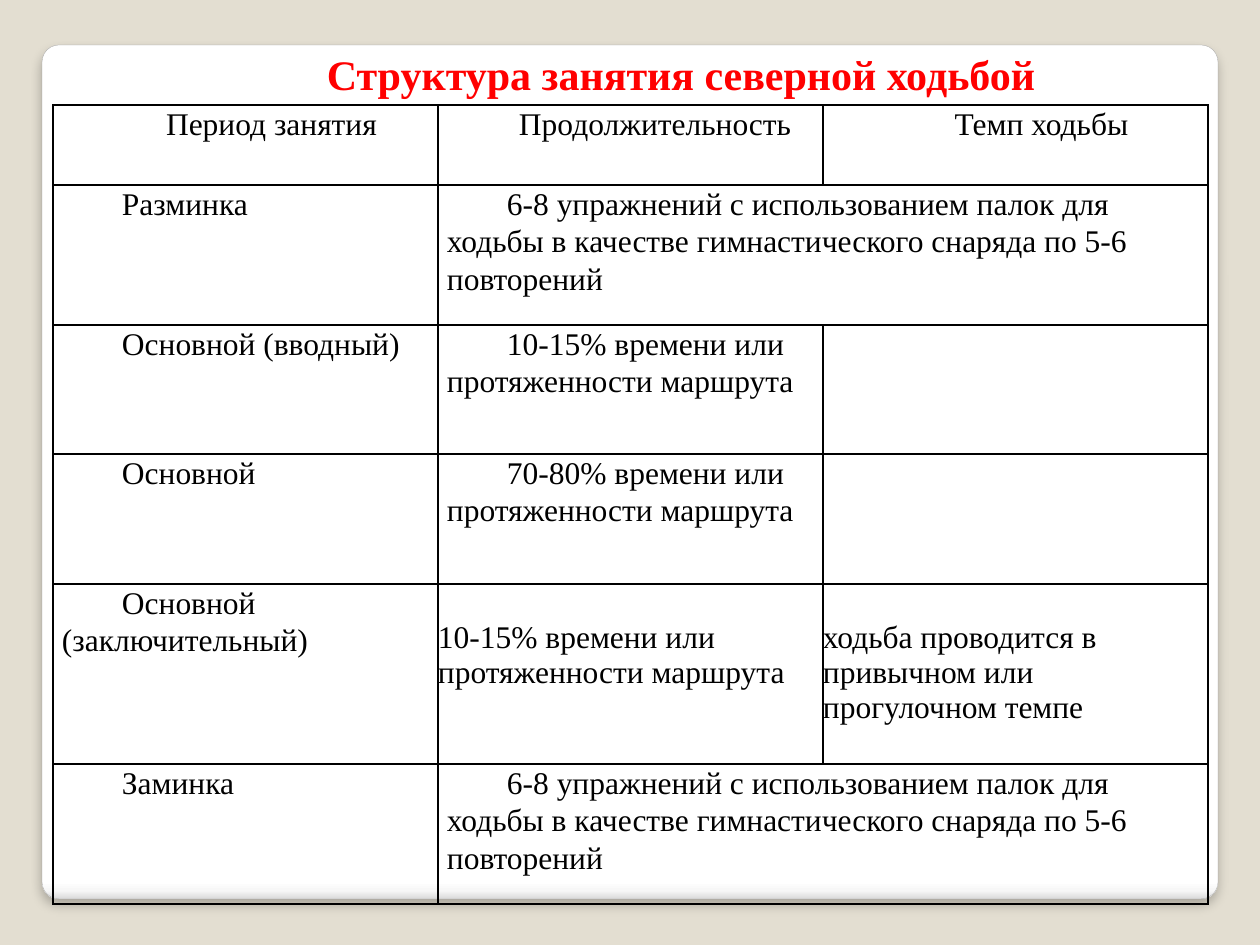
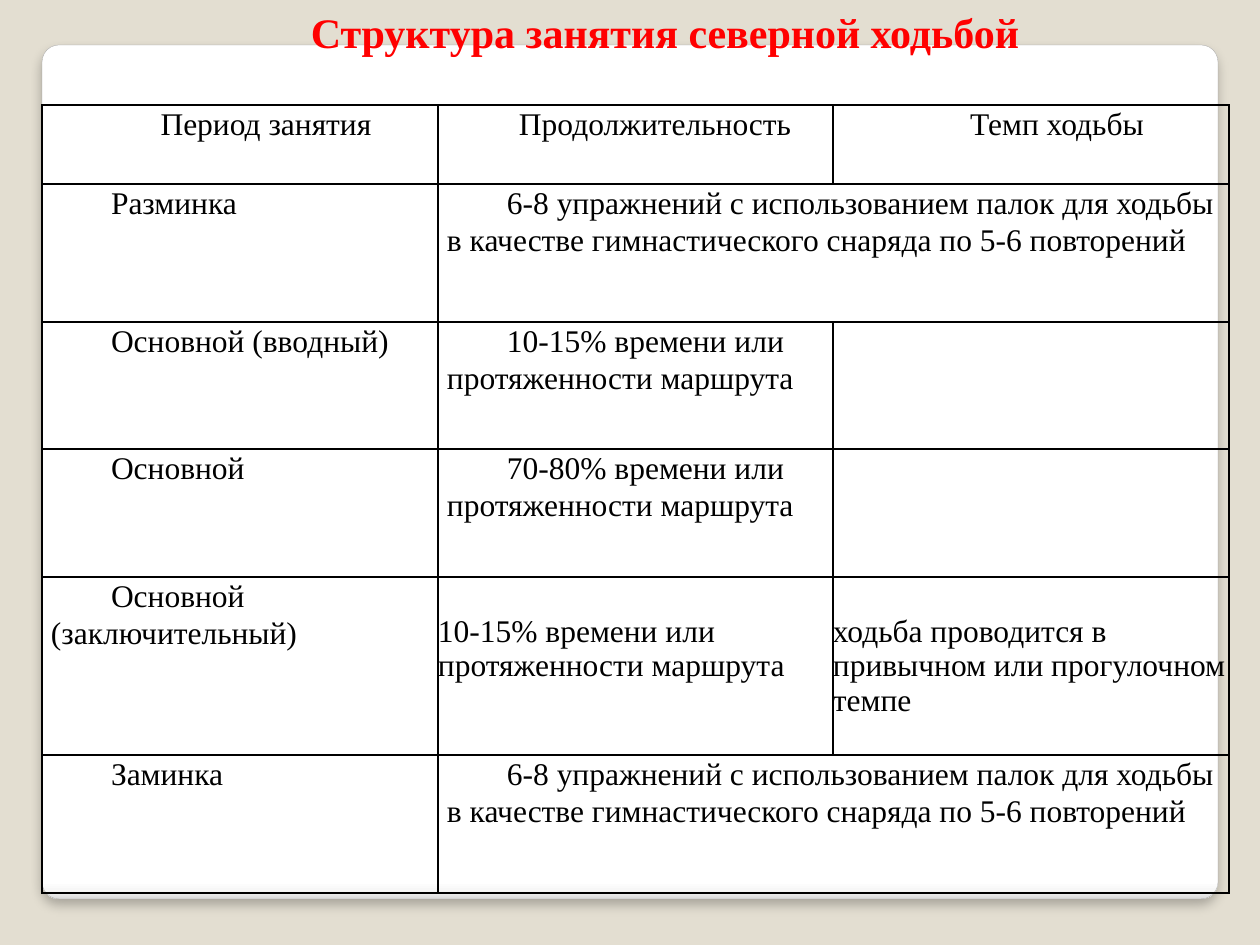
from dataclasses import dataclass

from lxml import etree
from pptx import Presentation
from pptx.dml.color import RGBColor
from pptx.enum.shapes import MSO_SHAPE
from pptx.enum.text import PP_ALIGN
from pptx.oxml.ns import qn
from pptx.util import Pt

ROUND = MSO_SHAPE.ROUNDED_RECTANGLE
LEFT, MID = PP_ALIGN.LEFT, PP_ALIGN.CENTER
SCALE = 914400 / 126


@dataclass(frozen=True)
class Theme:
    """Colours, font and type sizes of the deck."""
    back: str = "E3DED1"
    edge: str = "A4A4A4"
    title: str = "FF0000"
    ink: str = "000000"
    fade: tuple = ((0, "FFFFFF"), (98, "FFFFFF"), (99, "F7F7F7"), (100, "DADADA"))
    font: str = "Times New Roman"
    head: int = 24
    body: int = 18
    space: float = 1.07


THEME = Theme()
PANEL = (42, 45, 1176, 854)
INDENT = 60
TITLE = "Структура занятия северной ходьбой"
DRILL = ("6-8 упражнений с использованием палок для ходьбы "
         "в качестве гимнастического снаряда по 5-6 повторений")
SHORT = "10-15% времени или протяженности маршрута"
LONG = "70-80% времени или протяженности маршрута"
PACE = "ходьба проводится в привычном или прогулочном темпе"
HEADS = (("Период занятия ", MID, 0), ("Продолжительность", LEFT, 21),
         ("Темп ходьбы ", MID, 0))
STAGES = (("Разминка", DRILL, None),
          ("Основной (вводный)", SHORT, ""),
          ("Основной", LONG, ""),
          ("Основной (заключительный)", SHORT, PACE),
          ("Заминка", DRILL, None))


def px(n):
    """Turn pixels into EMU."""
    return round(n * SCALE)


def rgb(code):
    """Return the colour for a hex code."""
    return RGBColor.from_string(code)


def node(parent, tag, **attrs):
    """Add a drawing element below parent."""
    return etree.SubElement(parent, qn("a:" + tag),
                            {key: str(val) for key, val in attrs.items()})


def write(para, text, size, color, align=LEFT, margin=0, indent=0, bold=False):
    """Fill one paragraph and set its font and indents."""
    para.text = text
    para.alignment = align
    font = para.font
    font.name, font.size, font.bold = THEME.font, Pt(size), bold
    font.color.rgb = rgb(color)
    props = para._p.get_or_add_pPr()
    props.set("marL", str(px(margin)))
    props.set("indent", str(px(indent)))


def add_panel(slide, box):
    """Draw the rounded white panel with its soft shadow."""
    panel = slide.shapes.add_shape(ROUND, *map(px, box))
    panel.adjustments[0] = 0.02
    panel.line.color.rgb = rgb(THEME.edge)
    panel.line.width = Pt(0.16)
    panel.fill.gradient()
    panel.fill.gradient_angle = 270
    panel.shadow.inherit = False
    props = panel._element.spPr
    stops = props.find(qn("a:gradFill")).find(qn("a:gsLst"))
    for stop in list(stops):
        stops.remove(stop)
    for pos, color in THEME.fade:
        node(node(stops, "gs", pos=pos * 1000), "srgbClr", val=color)
    shade = node(props.find(qn("a:effectLst")), "outerShdw", blurRad=Pt(6),
                 dist=Pt(4), dir=5400000, algn="t", rotWithShape=0)
    node(node(shade, "srgbClr", val=THEME.ink), "alpha", val=25000)


def add_title(slide, box):
    """Write the centred red title."""
    frame = slide.shapes.add_textbox(*map(px, box)).text_frame
    frame.word_wrap = True
    write(frame.paragraphs[0], TITLE, THEME.head, THEME.title, MID,
          indent=INDENT, bold=True)


def frame_cell(cell):
    """Give a cell thin borders, no fill and no margins."""
    props = cell._tc.get_or_add_tcPr()
    for side in ("lnL", "lnR", "lnT", "lnB"):
        line = node(props, side, w=Pt(1))
        node(node(line, "solidFill"), "srgbClr", val=THEME.ink)
    cell.fill.background()
    cell.margin_left = cell.margin_right = 0
    cell.margin_top = cell.margin_bottom = 0


def fill_cell(cell, text, align=LEFT, margin=9, indent=INDENT):
    """Write body text in a cell."""
    para = cell.text_frame.paragraphs[0]
    write(para, text, THEME.body, THEME.ink, align, margin, indent)
    para.line_spacing = THEME.space


def add_plan(slide, spot, cols, rows):
    """Build the lesson table at a spot from column and row sizes."""
    size = (sum(cols), sum(rows))
    table = slide.shapes.add_table(len(rows), len(cols),
                                   *map(px, spot + size)).table
    table.first_row = table.horz_banding = False
    for col, width in zip(table.columns, cols):
        col.width = px(width)
    for row, height in zip(table.rows, rows):
        row.height = px(height)
    for cell in table.iter_cells():
        frame_cell(cell)
    for c, (text, align, margin) in enumerate(HEADS):
        fill_cell(table.cell(0, c), text, align, margin)
    for r, (stage, time, pace) in enumerate(STAGES, 1):
        first, second, third = (table.cell(r, c) for c in range(3))
        fill_cell(first, stage)
        if pace is None:
            second.merge(third)
        if not pace:
            fill_cell(second, time)
            continue
        for cell, text in ((second, time), (third, pace)):
            fill_cell(cell, text, margin=0, indent=0)
            cell.text_frame.paragraphs[0].line_spacing = 1
            cell.margin_top = px(37)


def add_page(deck, title, spot, cols, rows):
    """Add one slide with panel, table and title."""
    slide = deck.slides.add_slide(deck.slide_layouts[6])
    fill = slide.background.fill
    fill.solid()
    fill.fore_color.rgb = rgb(THEME.back)
    add_panel(slide, PANEL)
    add_plan(slide, spot, cols, rows)
    add_title(slide, title)


def main():
    """Build and save the deck."""
    deck = Presentation()
    deck.slide_width, deck.slide_height = px(1260), px(945)
    add_page(deck, (105, 42, 1092, 63), (53, 105), (385, 385, 385),
             (80, 140, 129, 130, 180, 140))
    add_page(deck, (63, 0, 1144, 115), (42, 105), (396, 395, 396),
             (79, 138, 127, 128, 178, 138))
    deck.save("out.pptx")


if __name__ == "__main__":
    main()
